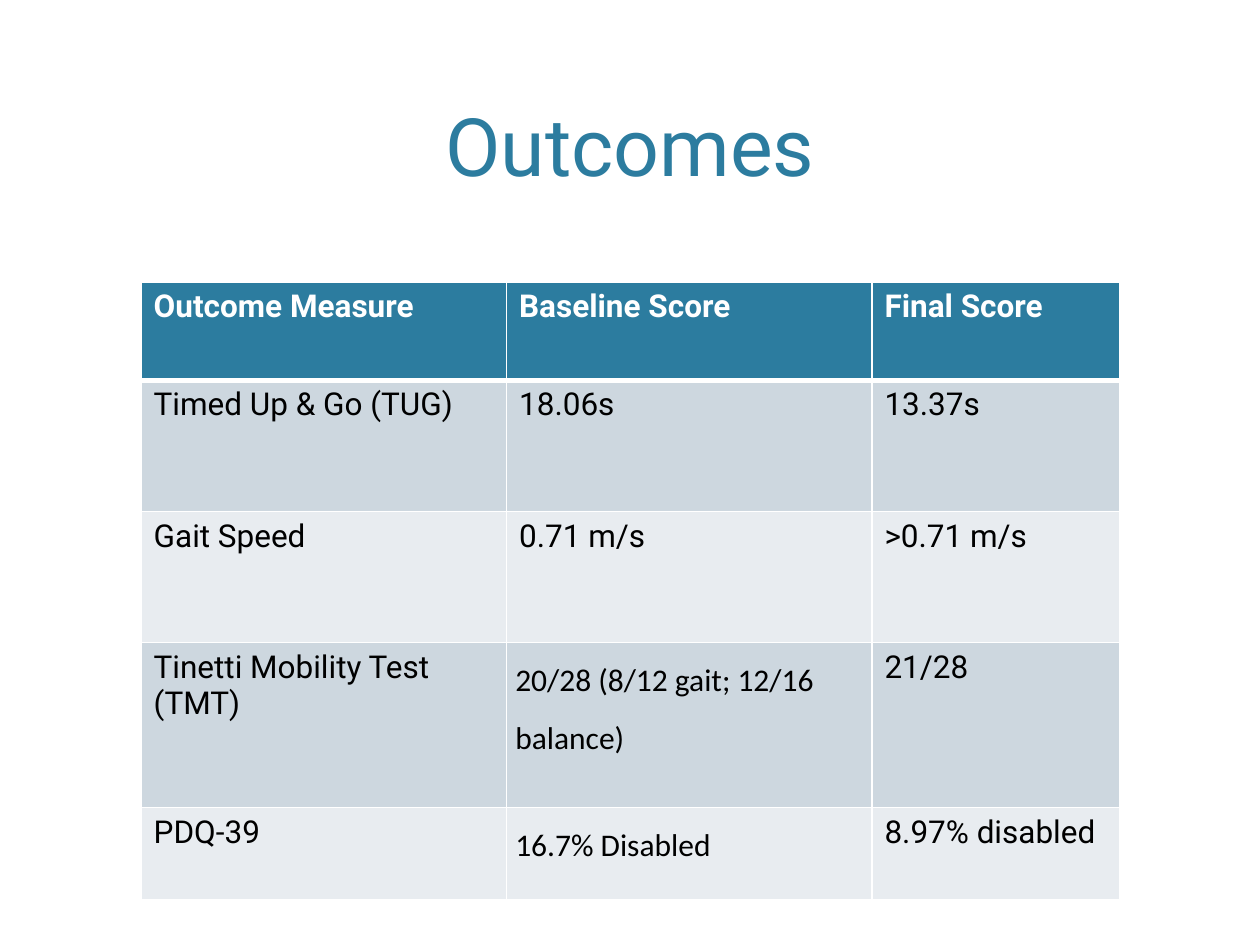
from dataclasses import dataclass

from lxml import etree
from pptx import Presentation
from pptx import util as u
from pptx.dml.color import RGBColor
from pptx.enum import text
from pptx.oxml.ns import qn


@dataclass(frozen=True)
class Theme:
    accent: str = "2C7C9F"
    band_dark: str = "CDD7DF"
    band_light: str = "E8ECF0"
    white: str = "FFFFFF"
    black: str = "000000"
    font: str = "Roboto"
    alt_font: str = "Calibri"
    title_size: int = 46
    table_size: int = 18


THEME = Theme()
COLUMNS = [2.9, 2.9, 1.97]
ROWS = [0.78, 1.04, 1.04, 1.31, 0.73]
SCORES = [
    ["Outcome Measure", "Baseline Score", "Final Score"],
    ["Timed Up & Go (TUG)", "18.06s", "13.37s"],
    ["Gait Speed", "0.71 m/s", ">0.71 m/s"],
    ["Tinetti Mobility Test (TMT)", "20/28 (8/12 gait; 12/16 balance)", "21/28"],
    ["PDQ-39", "16.7% Disabled", "8.97% disabled"],
]
SPACED_CELLS = {(3, 1), (4, 1)}


def set_font(p, name, size, color, bold=False):
    p.font.name = name
    p.font.size = u.Pt(size)
    p.font.bold = bold
    p.font.color.rgb = RGBColor.from_string(color)


def add_title(s, title):
    sp = s.shapes.title
    sp.left, sp.top = u.Inches(0.6), u.Inches(0.12)
    sp.width, sp.height = u.Inches(8.8), u.Inches(1.46)
    tf = sp.text_frame
    tf.text = title
    tf.vertical_anchor = text.MSO_ANCHOR.BOTTOM
    p = tf.paragraphs[0]
    p.alignment = text.PP_ALIGN.CENTER
    set_font(p, THEME.font, THEME.title_size, THEME.accent)


def set_borders(cell, **widths):
    """Draw white borders; widths maps L, R, T and B to points."""
    tc_pr = cell._tc.get_or_add_tcPr()
    for i, (side, width) in enumerate(widths.items()):
        ln = etree.Element(qn(f"a:ln{side}"), w=str(u.Pt(width)))
        fill = etree.SubElement(ln, qn("a:solidFill"))
        etree.SubElement(fill, qn("a:srgbClr"), val=THEME.white)
        tc_pr.insert(i, ln)


def format_cell(cell, row, spaced):
    header = row == 0
    band = THEME.band_dark if row % 2 else THEME.band_light
    cell.fill.solid()
    cell.fill.fore_color.rgb = RGBColor.from_string(THEME.accent if header else band)
    set_borders(cell, L=1, R=1, T=3 if row == 1 else 1, B=3 if header else 1)
    p = cell.text_frame.paragraphs[0]
    set_font(p, THEME.alt_font if spaced else THEME.font, THEME.table_size,
             THEME.white if header else THEME.black, header)
    if spaced:
        p.line_spacing = 1.5
        cell.margin_left = cell.margin_right = u.Inches(0.07)
        cell.margin_top = cell.margin_bottom = 0


def add_score_table(s, left, top):
    frame = s.shapes.add_table(len(ROWS), len(COLUMNS), u.Inches(left), u.Inches(top),
                               u.Inches(sum(COLUMNS)), u.Inches(sum(ROWS)))
    table = frame.table
    for column, width in zip(table.columns, COLUMNS):
        column.width = u.Inches(width)
    for r, height in enumerate(ROWS):
        table.rows[r].height = u.Inches(height)
        for c, value in enumerate(SCORES[r]):
            cell = table.cell(r, c)
            cell.text = value
            format_cell(cell, r, (r, c) in SPACED_CELLS)


def main():
    prs = Presentation()
    prs.slide_width, prs.slide_height = u.Inches(10), u.Inches(7.5)
    s = prs.slides.add_slide(prs.slide_layouts.get_by_name("Title Only"))
    add_title(s, "Outcomes")
    add_score_table(s, 1.12, 2.24)
    prs.save("out.pptx")


if __name__ == "__main__":
    main()
